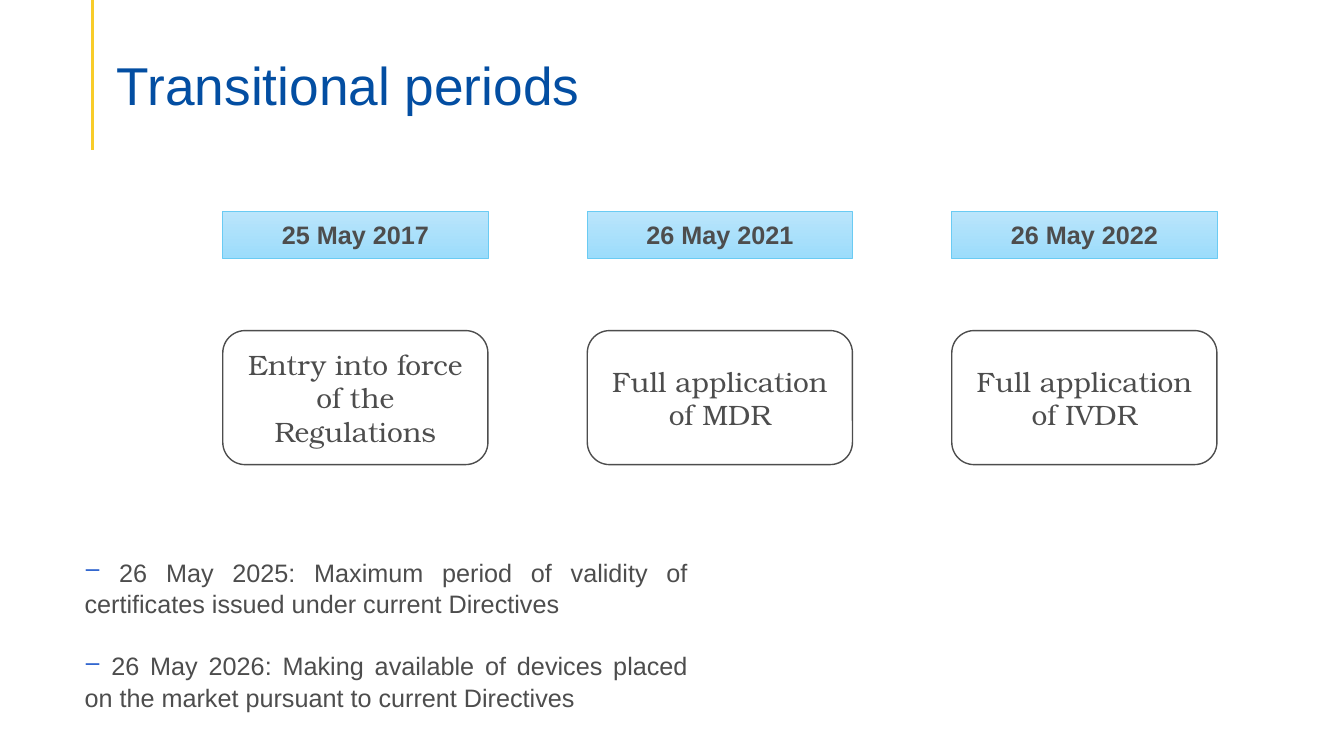
from lxml import etree
from pptx import Presentation
from pptx.dml.color import RGBColor
from pptx.enum.shapes import MSO_CONNECTOR, MSO_SHAPE
from pptx.enum.text import MSO_ANCHOR, PP_ALIGN
from pptx.oxml.ns import qn
from pptx.util import Inches, Pt

RECTANGLE, ROUNDED = MSO_SHAPE.RECTANGLE, MSO_SHAPE.ROUNDED_RECTANGLE
STRAIGHT, MIDDLE = MSO_CONNECTOR.STRAIGHT, MSO_ANCHOR.MIDDLE
LEFT, CENTER, JUSTIFY = PP_ALIGN.LEFT, PP_ALIGN.CENTER, PP_ALIGN.JUSTIFY
TITLE_ONLY = 5

COLORS = {
    "title": "034EA2", "rule": "F8CC29", "text": "4D4D4D", "dash": "3166CF",
    "date_top": "BAE5FB", "date_bottom": "9CDCFB", "date_line": "6ACBF3",
    "white": "FFFFFF",
}
MILESTONES = [
    ("25 May 2017", "Entry into force of the Regulations"),
    ("26 May 2021", "Full application of MDR"),
    ("26 May 2022", "Full application of IVDR"),
]
DEADLINES = [
    " 26 May 2025: Maximum period of validity of certificates issued under current Directives",
    " 26 May 2026: Making available of devices placed on the market pursuant to current Directives",
]
COLUMN_LEFT, COLUMN_STEP, COLUMN_WIDTH = 2.21, 3.615, 2.63
DATE_TOP, DATE_HEIGHT = 2.1, 0.46
EVENT_TOP, EVENT_HEIGHT = 3.28, 1.33


def color(name):
    return RGBColor.from_string(COLORS[name])


def style_text(para, align, size, ink="text", face="Arial", bold=False):
    para.alignment = align
    for span in para.runs:
        span.font.name, span.font.size, span.font.bold = face, Pt(size), bold
        span.font.color.rgb = color(ink)


deck = Presentation()
deck.slide_width, deck.slide_height = Inches(13.33), Inches(7.5)
page = deck.slides.add_slide(deck.slide_layouts[TITLE_ONLY])

# Title and its vertical rule
rule = page.shapes.add_connector(STRAIGHT, Inches(0.92), 0, Inches(0.92), Inches(1.49))
rule.line.color.rgb = color("rule")
rule.line.width = Pt(2.25)
etree.SubElement(rule._element.spPr, qn("a:effectLst"))

title = page.shapes.title
title.left, title.top = Inches(1.06), Inches(0.21)
title.width, title.height = Inches(12.06), Inches(1.28)
title.text_frame.text = "Transitional periods"
title.text_frame.vertical_anchor = MIDDLE
title.text_frame.margin_bottom = 0
title.text_frame.paragraphs[0].line_spacing = 0.9
style_text(title.text_frame.paragraphs[0], LEFT, 38, "title")

# One column per milestone: date above, event below
for column, (date, event) in enumerate(MILESTONES):
    left = Inches(COLUMN_LEFT + column * COLUMN_STEP)
    event_box = page.shapes.add_shape(
        ROUNDED, left, Inches(EVENT_TOP), Inches(COLUMN_WIDTH), Inches(EVENT_HEIGHT))
    event_box.fill.solid()
    event_box.fill.fore_color.rgb = color("white")
    event_box.line.color.rgb = color("text")
    event_box.line.width = Pt(1)

    date_box = page.shapes.add_shape(
        RECTANGLE, left, Inches(DATE_TOP), Inches(COLUMN_WIDTH), Inches(DATE_HEIGHT))
    date_box.fill.gradient()
    date_box.fill.gradient_angle = 270
    for stop, name in zip(date_box.fill.gradient_stops, ("date_top", "date_bottom")):
        stop.color.rgb = color(name)
    date_box.line.color.rgb = color("date_line")
    date_box.line.width = Pt(0.5)

    for box, text in ((event_box, event), (date_box, date)):
        box.shadow.inherit = False
        box.text_frame.text = text
        box.text_frame.word_wrap = True
        box.text_frame.vertical_anchor = MIDDLE
    style_text(event_box.text_frame.paragraphs[0], CENTER, 20, face="TeX Gyre Bonum")
    style_text(date_box.text_frame.paragraphs[0], CENTER, 18, bold=True)

# Deadlines with coloured dashes
notes_box = page.shapes.add_textbox(Inches(0.74), Inches(5.46), Inches(6.18), Inches(1.62))
frame = notes_box.text_frame
frame.word_wrap = True
frame.text = "\n".join(DEADLINES)
for index, para in enumerate(frame.paragraphs):
    properties = para._p.get_or_add_pPr()
    bullet_color = etree.SubElement(properties, qn("a:buClr"))
    etree.SubElement(bullet_color, qn("a:srgbClr"), val=COLORS["dash"])
    etree.SubElement(properties, qn("a:buChar"), char="‒")
    para.line_spacing = 1.05
    if index:
        para.space_before = Pt(21.6)
    style_text(para, JUSTIFY, 18)

deck.save("out.pptx")
